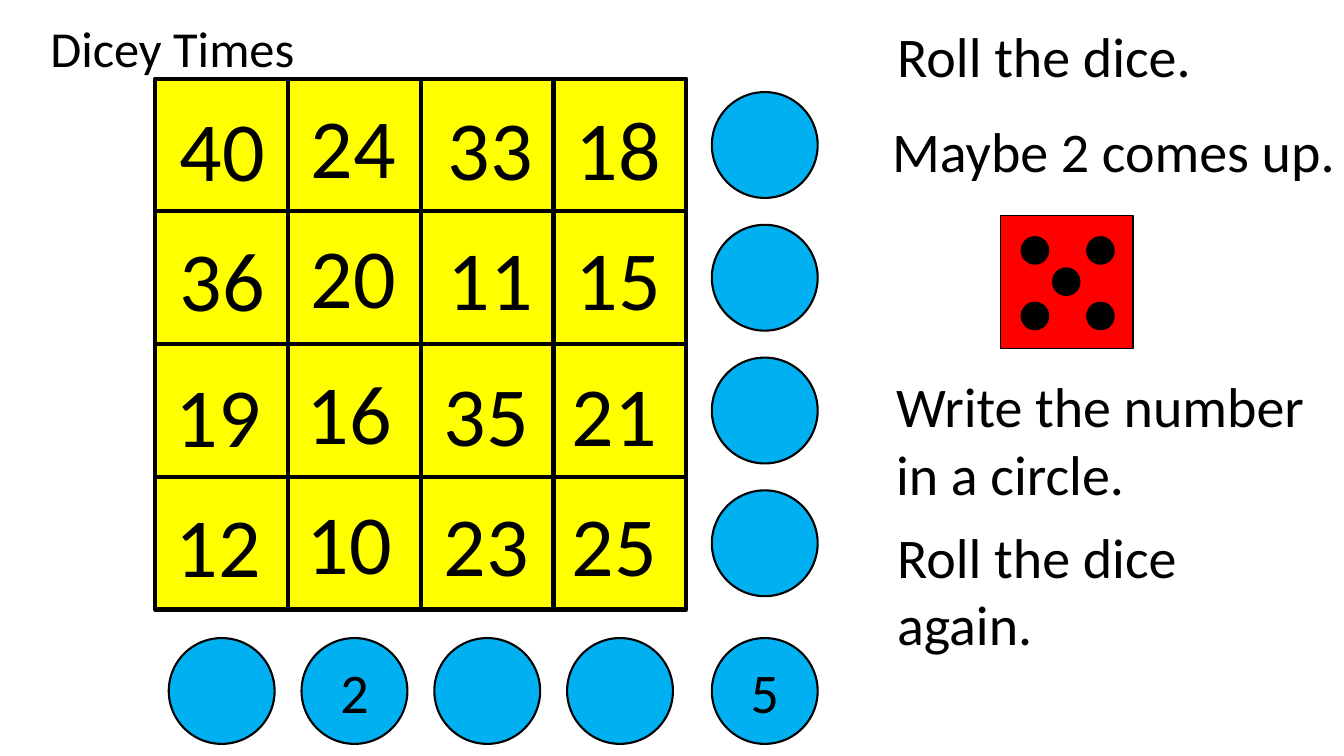
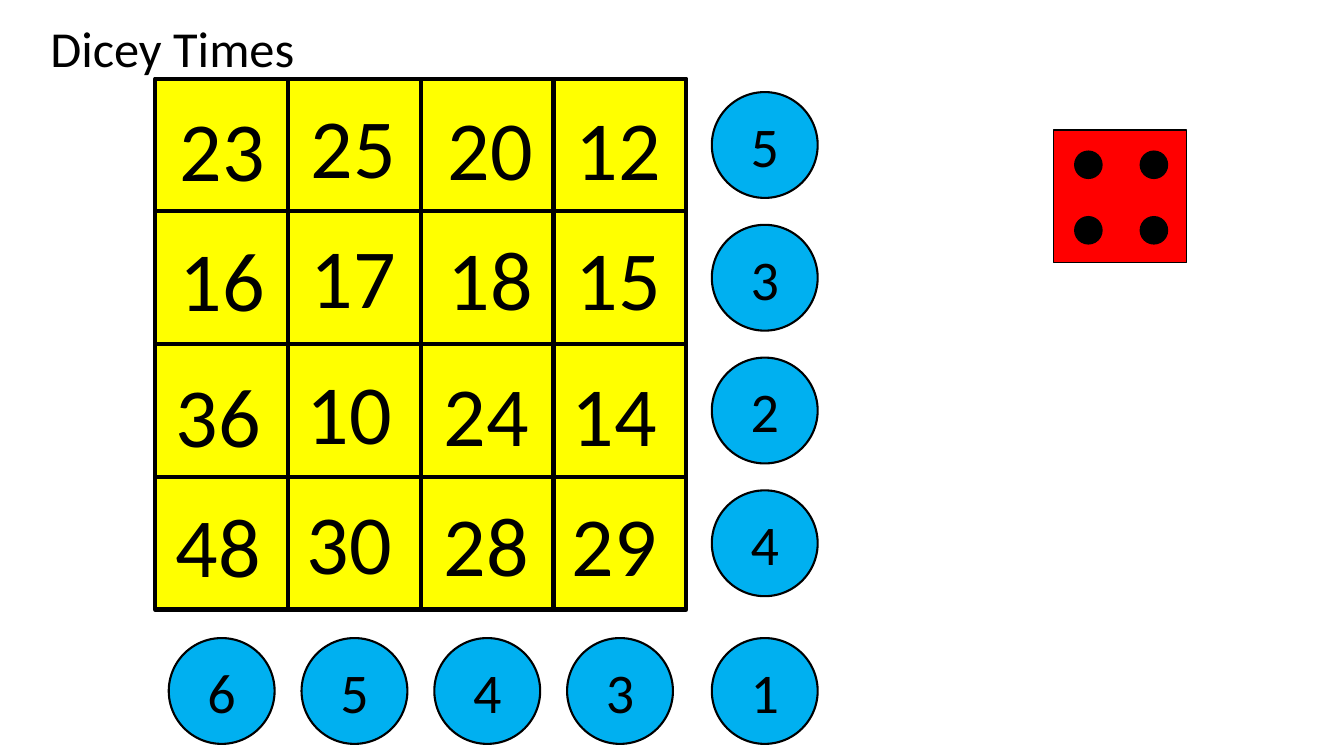
from itertools import product

from pptx import Presentation
from pptx.dml.color import RGBColor
from pptx.enum.shapes import MSO_SHAPE
from pptx.enum.text import MSO_ANCHOR, MSO_AUTO_SIZE, PP_ALIGN
from pptx.util import Inches, Pt

TITLE = "Dicey Times"
# "side" circles run from top to bottom, "base" circles from left to right.
GAMES = [
    {
        "numbers": [[40, 24, 33, 18], [36, 20, 11, 15], [19, 16, 35, 21], [12, 10, 23, 25]],
        "side": ["", "", "", ""],
        "base": ["", "2", "", "", "5"],
        "die": {"at": (9.92, 2.14), "value": 5},
        "steps": [
            ("Roll the dice.", (8.8, 0.16, 3.75, 0.77)),
            ("Maybe 2 comes up.", (8.75, 1.11, 4.58, 0.77)),
            ("Write the number in a circle.", (8.79, 3.64, 4.27, 1.45)),
            ("Roll the dice again.", (8.8, 5.13, 4.27, 1.45)),
        ],
    },
    {
        "numbers": [[23, 25, 20, 12], [16, 17, 18, 15], [36, 10, 24, 14], [48, 30, 28, 29]],
        "side": ["5", "3", "2", "4"],
        "base": ["6", "5", "4", "3", "1"],
        "die": {"at": (10.45, 1.29), "value": 4},
        "steps": [],
    },
]

THEME = {
    "font": "Calibri",
    "ink": RGBColor(0, 0, 0),
    "cell": RGBColor(0xFF, 0xFF, 0),
    "circle": RGBColor(0, 0xB0, 0xF0),
    "die": RGBColor(0xFF, 0, 0),
    "title_size": 36,
    "step_size": 40,
    "number_size": 60,
}

SIDE = 1.317  # a cell and a die are the same size
BOARD_LEFT, BOARD_TOP = 1.54, 0.78
CIRCLE = 1.05
CIRCLE_INSET = (SIDE - CIRCLE) / 2
SIDE_LEFT, BASE_TOP = 7.06, 6.33
NUMBER_LEFTS = [1.68, 2.98, 4.34, 5.61]
NUMBER_TOPS = [0.92, 2.21, 3.56, 4.85]
NUMBER_LIFTS = [0, 0.03, 0.01, 0.01]  # by column
LOWER_ROWS_SHIFT = 0.04
PIP = 0.27
PIP_NEAR, PIP_MIDDLE, PIP_FAR = 0.21, 0.52, 0.86
CORNER_PIPS = list(product((PIP_NEAR, PIP_FAR), repeat=2))
PIPS = {4: CORNER_PIPS, 5: CORNER_PIPS + [(PIP_MIDDLE, PIP_MIDDLE)]}


def inches(*lengths):
    return [Inches(length) for length in lengths]


def write(shape, text, size, align=PP_ALIGN.LEFT, **frame_format):
    frame = shape.text_frame
    frame_format = {"word_wrap": True, "auto_size": MSO_AUTO_SIZE.NONE,
                    "vertical_anchor": MSO_ANCHOR.TOP, **frame_format}
    for name, value in frame_format.items():
        setattr(frame, name, value)
    paragraph = frame.paragraphs[0]
    paragraph.alignment = align
    run = paragraph.add_run()
    run.text = text
    for name, value in {"name": THEME["font"], "size": Pt(size)}.items():
        setattr(run.font, name, value)
    run.font.color.rgb = THEME["ink"]


def add_figure(shapes, kind, box, fill, line_width):
    shape = shapes.add_shape(kind, *inches(*box))
    shape.shadow.inherit = False
    shape.fill.solid()
    shape.fill.fore_color.rgb = fill
    shape.line.color.rgb = THEME["ink"]
    shape.line.width = Pt(line_width)
    return shape


def add_circle(slide, left, top, label):
    circle = add_figure(slide.shapes, MSO_SHAPE.OVAL, (left, top, CIRCLE, CIRCLE),
                        THEME["circle"], 1.5)
    if label:
        write(circle, label, THEME["step_size"], PP_ALIGN.CENTER,
              vertical_anchor=MSO_ANCHOR.MIDDLE, margin_top=0, margin_bottom=0)


def add_board(slide, numbers):
    cells = slide.shapes.add_group_shape().shapes
    for row, column in product(range(4), repeat=2):
        box = (BOARD_LEFT + column * SIDE, BOARD_TOP + row * SIDE, SIDE, SIDE)
        add_figure(cells, MSO_SHAPE.RECTANGLE, box, THEME["cell"], 3)
    for row, column in product(range(4), repeat=2):
        left = NUMBER_LEFTS[column] - (LOWER_ROWS_SHIFT if row > 1 else 0)
        top = NUMBER_TOPS[row] - NUMBER_LIFTS[column]
        number = slide.shapes.add_textbox(*inches(left, top, CIRCLE, 1.11))
        write(number, str(numbers[row][column]), THEME["number_size"], PP_ALIGN.CENTER)


def add_circles(slide, side, base):
    for row, label in enumerate(side):
        add_circle(slide, SIDE_LEFT, BOARD_TOP + row * SIDE + CIRCLE_INSET, label)
    base_lefts = [BOARD_LEFT + column * SIDE + CIRCLE_INSET for column in range(4)]
    for left, label in zip(base_lefts + [SIDE_LEFT], base):
        add_circle(slide, left, BASE_TOP, label)


def add_die(slide, at, value):
    left, top = at
    shapes = slide.shapes.add_group_shape().shapes
    add_figure(shapes, MSO_SHAPE.RECTANGLE, (left, top, SIDE, SIDE), THEME["die"], 1)
    for across, down in PIPS[value]:
        box = (left + across, top + down, PIP, PIP)
        add_figure(shapes, MSO_SHAPE.OVAL, box, THEME["ink"], 1)


def add_game(presentation, game):
    slide = presentation.slides.add_slide(presentation.slide_layouts[5])
    title = slide.shapes.title
    title.left, title.top, title.width, title.height = inches(0.4, 0.12, 6.71, 0.71)
    write(title, TITLE, THEME["title_size"])
    add_board(slide, game["numbers"])
    add_circles(slide, game["side"], game["base"])
    add_die(slide, **game["die"])
    for text, box in game["steps"]:
        step = slide.shapes.add_textbox(*inches(*box))
        write(step, text, THEME["step_size"], margin_right=0)


def main():
    presentation = Presentation()
    presentation.slide_width, presentation.slide_height = inches(13.33, 7.5)
    for game in GAMES:
        add_game(presentation, game)
    presentation.save("out.pptx")


if __name__ == "__main__":
    main()
